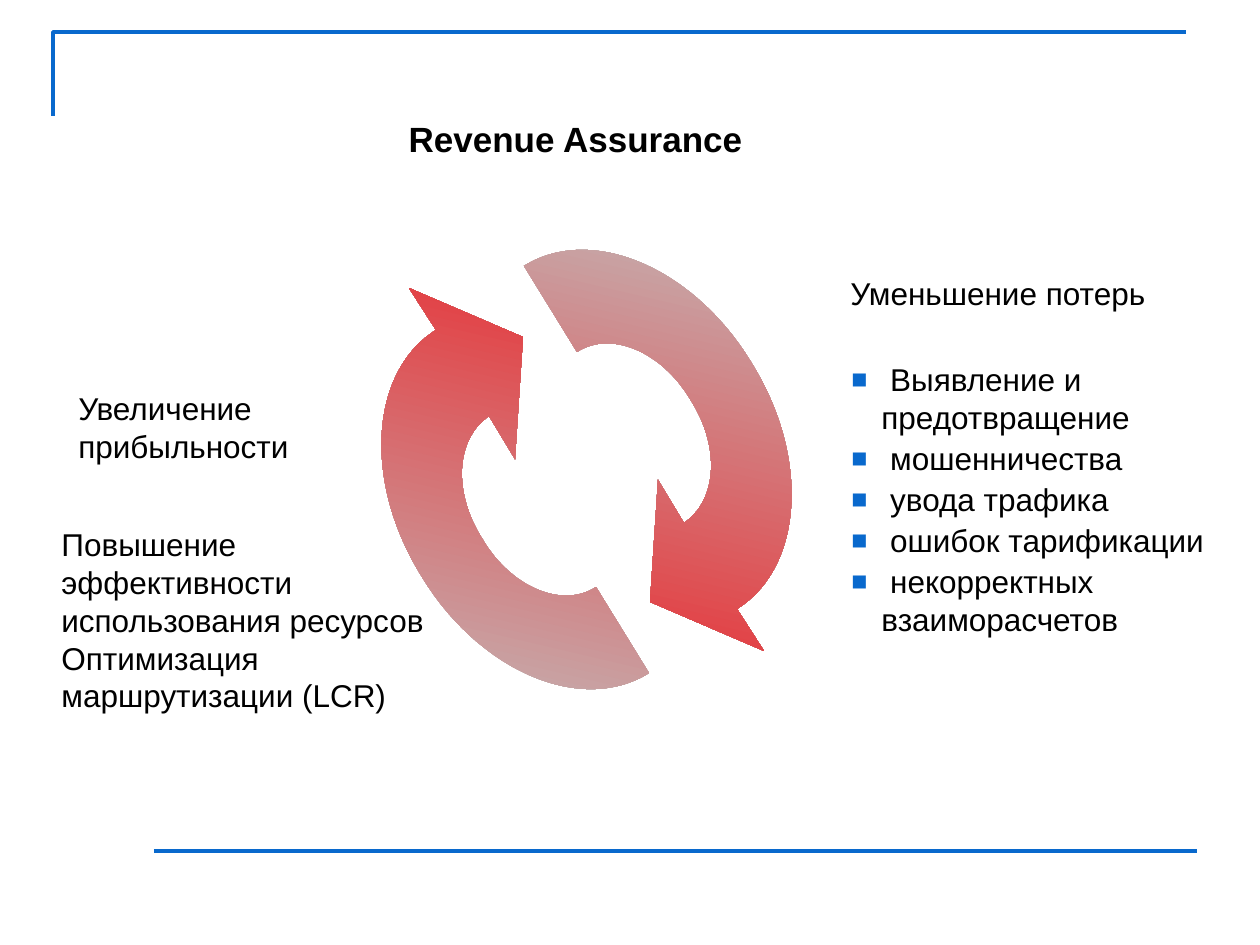
"""Build the Revenue Assurance cycle slide."""
import dataclasses
import math
import typing

import lxml.etree
import pptx
import pptx.dml.color
import pptx.enum.shapes
import pptx.enum.text
import pptx.oxml.ns
import pptx.util

Point = tuple[float, float]
SCALE = 914400 / 126
COLORS = {"blue": "0969CD", "black": "000000", "silver": "C0C0C0", "red": "EA262B"}
BODY_FORMAT = {"name": "Arial", "size": pptx.util.Pt(18), "bold": False}
TITLE_FORMAT = {"name": "Arial", "size": pptx.util.Pt(20), "bold": True}
FRAME_FORMAT = {
    "auto_size": pptx.enum.text.MSO_AUTO_SIZE.NONE,
    "vertical_anchor": pptx.enum.text.MSO_ANCHOR.TOP,
    "word_wrap": True,
    "margin_left": pptx.util.Inches(0.1),
    "margin_right": pptx.util.Inches(0.1),
    "margin_top": pptx.util.Inches(0.05),
    "margin_bottom": pptx.util.Inches(0.05),
}
BULLET_INDENT = 30
CORNER = [(53, 116), (53, 32), (1186, 32)]
FOOTER_LINE = [(154, 851), (1197, 851)]
ARROW_SIZE = (403, 285)
ARROW_TURN = 58.2
ARROW_START = (684, 523)
ARROW_SEGMENTS = [
    [(717, 501), (721, 447), (690, 399)],
    [(662, 352), (611, 330), (577, 352)],
    [(524, 266)],
    [(591, 224), (693, 267), (751, 362)],
    [(810, 456), (804, 567), (737, 609)],
    [(764, 651)],
    [(650, 602)],
    [(658, 480)],
]


@dataclasses.dataclass(frozen=True)
class Note:
    left: int
    top: int
    width: int
    height: int
    lines: tuple[str, ...]
    bulleted: bool = False


@dataclasses.dataclass(frozen=True)
class Arrow:
    left: int
    top: int
    rotation: float


RIGHT_ARROW = Arrow(428, 295, ARROW_TURN)
LEFT_ARROW = Arrow(342, 359, ARROW_TURN + 180)
TITLE = Note(396, 101, 712, 66, ("Revenue Assurance",))
NOTES = [
    Note(49, 519, 422, 202, (
        "Повышение эффективности\vиспользования ресурсов",
        "Оптимизация маршрутизации (LCR)",
    )),
    Note(838, 268, 343, 50, ("Уменьшение потерь",)),
    Note(66, 383, 236, 88, ("Увеличение\vприбыльности",)),
    Note(839, 354, 386, 292, (
        " Выявление и предотвращение",
        " мошенничества",
        " увода трафика",
        " ошибок тарификации",
        " некорректных взаиморасчетов",
    ), bulleted=True),
]


def px(value: float) -> pptx.util.Emu:
    return pptx.util.Emu(round(value * SCALE))


def color(name: str) -> pptx.dml.color.RGBColor:
    return pptx.dml.color.RGBColor.from_string(COLORS[name])


def apply_format(target: typing.Any, values: dict[str, typing.Any]) -> None:
    for name, value in values.items():
        setattr(target, name, value)


def add_child(parent: typing.Any, tag: str, **attributes: str) -> typing.Any:
    return lxml.etree.SubElement(parent, pptx.oxml.ns.qn(tag), **attributes)


def add_bullet(para: typing.Any) -> None:
    properties = para._p.get_or_add_pPr()
    properties.set("marL", str(px(BULLET_INDENT)))
    properties.set("indent", str(-px(BULLET_INDENT)))
    add_child(add_child(properties, "a:buClr"), "a:srgbClr", val=COLORS["blue"])
    add_child(properties, "a:buSzPct", val="85000")
    add_child(properties, "a:buFont", typeface="Arial")
    add_child(properties, "a:buChar", char="■")


def fill_note(box: typing.Any, note: Note, font_format: dict[str, typing.Any]) -> None:
    place = {name: px(getattr(note, name)) for name in ("left", "top", "width", "height")}
    apply_format(box, place)
    frame = box.text_frame
    apply_format(frame, FRAME_FORMAT)
    for index, line in enumerate(note.lines):
        para = frame.add_paragraph() if index else frame.paragraphs[0]
        para.text = line
        para.alignment = pptx.enum.text.PP_ALIGN.LEFT
        para.space_before = pptx.util.Pt(1.8 if index and note.bulleted else 0)
        if note.bulleted:
            add_bullet(para)
        for span in para.runs:
            apply_format(span.font, font_format)
            span.font.color.rgb = color("black")


def style_line(line: typing.Any) -> None:
    line.color.rgb = color("blue")
    line.width = pptx.util.Pt(2)


def draw_outline(page: typing.Any, points: list[Point], close: bool) -> typing.Any:
    corners = [(px(x), px(y)) for x, y in points]
    builder = page.shapes.build_freeform(*corners[0], scale=1.0)
    builder.add_line_segments(corners[1:], close=close)
    shape = builder.convert_to_shape()
    shape.shadow.inherit = False
    return shape


def draw_frame_lines(page: typing.Any) -> None:
    corner = draw_outline(page, CORNER, close=False)
    corner.fill.background()
    style_line(corner.line)
    (x1, y1), (x2, y2) = FOOTER_LINE
    footer = page.shapes.add_connector(
        pptx.enum.shapes.MSO_CONNECTOR.STRAIGHT, px(x1), px(y1), px(x2), px(y2)
    )
    style_line(footer.line)
    add_child(footer._element.spPr, "a:effectLst")


def unturned(point: Point) -> Point:
    width, height = ARROW_SIZE
    x = point[0] - RIGHT_ARROW.left - width / 2
    y = point[1] - RIGHT_ARROW.top - height / 2
    cosine, sine = (turn(math.radians(ARROW_TURN)) for turn in (math.cos, math.sin))
    return x * cosine + y * sine + width / 2, y * cosine - x * sine + height / 2


def draw_arrow(page: typing.Any, arrow: Arrow) -> None:
    left, top = arrow.left, arrow.top
    right, bottom = left + ARROW_SIZE[0], top + ARROW_SIZE[1]
    bounds = [(left, top), (right, top), (right, bottom), (left, bottom)]
    shape = draw_outline(page, bounds, close=True)
    outline = next(shape._element.iter(pptx.oxml.ns.qn("a:path")))
    for command in list(outline):
        outline.remove(command)
    for index, segment in enumerate([[ARROW_START], *ARROW_SEGMENTS]):
        straight = "a:lnTo" if index else "a:moveTo"
        command = add_child(outline, "a:cubicBezTo" if len(segment) == 3 else straight)
        for point in segment:
            x, y = unturned(point)
            add_child(command, "a:pt", x=str(px(x)), y=str(px(y)))
    add_child(outline, "a:close")
    shape.rotation = arrow.rotation
    shape.line.fill.background()
    shape.fill.gradient()
    shape.fill.gradient_angle = 315
    for stop, name in zip(shape.fill.gradient_stops, ("silver", "red")):
        stop.color.rgb = color(name)


def main() -> None:
    deck = pptx.Presentation()
    deck.slide_width, deck.slide_height = px(1260), px(945)
    page = deck.slides.add_slide(deck.slide_layouts[5])
    draw_frame_lines(page)
    fill_note(page.shapes.title, TITLE, TITLE_FORMAT)
    page.shapes.title.text_frame.paragraphs[0].line_spacing = 1.25
    for arrow in (RIGHT_ARROW, LEFT_ARROW):
        draw_arrow(page, arrow)
    for note in NOTES:
        fill_note(page.shapes.add_textbox(0, 0, 0, 0), note, BODY_FORMAT)
    deck.save("out.pptx")


if __name__ == "__main__":
    main()
